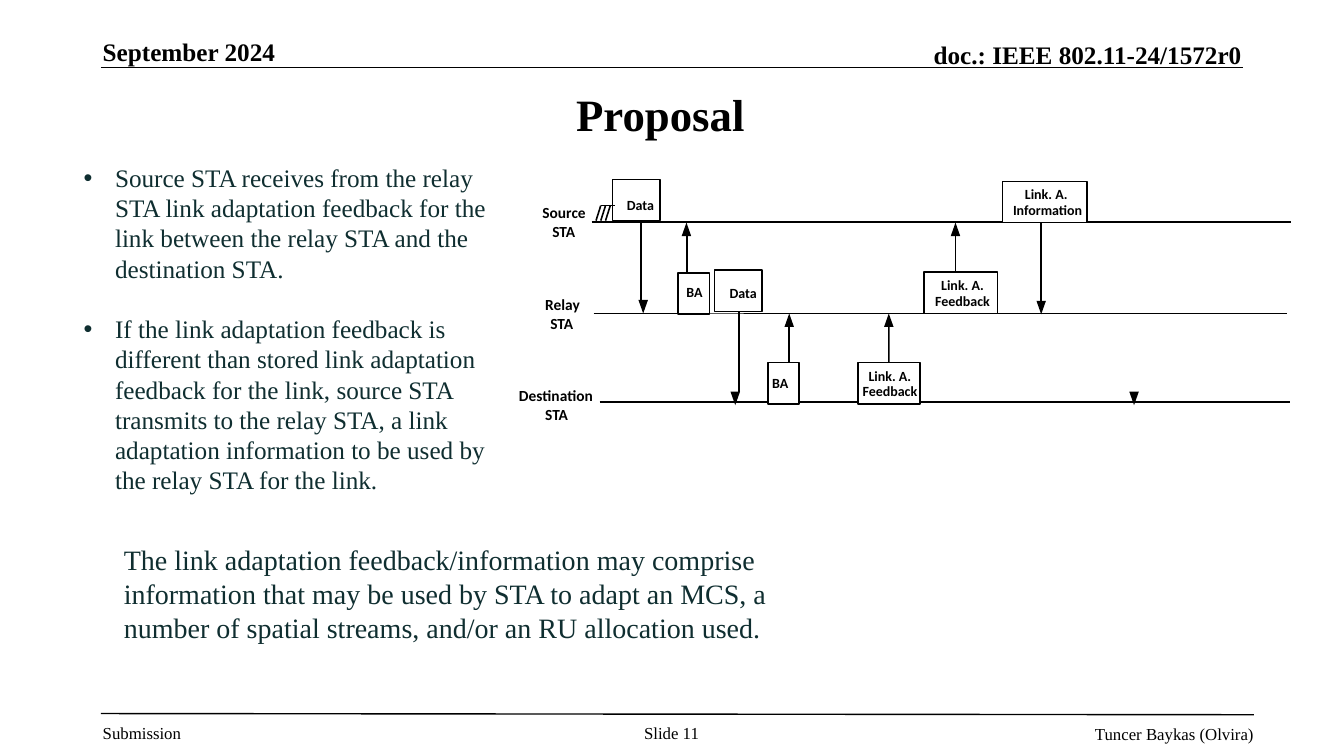
from lxml import etree
from pptx import Presentation
from pptx.dml.color import RGBColor
from pptx.enum.shapes import MSO_CONNECTOR, MSO_SHAPE
from pptx.enum.text import MSO_ANCHOR, MSO_AUTO_SIZE, PP_ALIGN
from pptx.oxml.ns import qn
from pptx.util import Cm, Pt

STRAIGHT = MSO_CONNECTOR.STRAIGHT
RECT = MSO_SHAPE.RECTANGLE
TOP, MIDDLE, BOTTOM = MSO_ANCHOR.TOP, MSO_ANCHOR.MIDDLE, MSO_ANCHOR.BOTTOM
LEFT, CENTER, RIGHT = PP_ALIGN.LEFT, PP_ALIGN.CENTER, PP_ALIGN.RIGHT
FIT, FIXED = MSO_AUTO_SIZE.SHAPE_TO_FIT_TEXT, MSO_AUTO_SIZE.NONE

COLORS = {"ink": "000000", "paper": "FFFFFF", "body": "0F2E30"}
SERIF, SANS = "Times New Roman", "Calibri"
DIAGRAM_LINE = 1.13
BOX_HEIGHT = 1.04
HEAD_WIDTH, HEAD_LENGTH = 0.24, 0.34


def color(name):
    return RGBColor.from_string(COLORS[name])


class SlideBuilder:
    """Adds elements to one slide; lengths are in centimetres."""

    def __init__(self, slide):
        self.shapes = slide.shapes

    def text(self, x, y, w, h, paragraphs, size, font=SERIF, bold=False, ink="ink",
             align=LEFT, anchor=TOP, inset=(0, 0), wrap=True, fit=FIXED):
        sp = self.shapes.add_textbox(Cm(x), Cm(y), Cm(w), Cm(h))
        tf = sp.text_frame
        tf.word_wrap, tf.auto_size, tf.vertical_anchor = wrap, fit, anchor
        tf.margin_left = tf.margin_right = Cm(inset[0])
        tf.margin_top = tf.margin_bottom = Cm(inset[1])
        tf.text = "\n".join(paragraphs)
        for p in tf.paragraphs:
            p.alignment = align
            for r in p.runs:
                r.font.name, r.font.size, r.font.bold = font, Pt(size), bold
                r.font.color.rgb = color(ink)
        return tf

    def body(self, x, y, w, h, paragraphs, size, pitch, bullets=False):
        """Running text with a fixed line pitch in points."""
        tf = self.text(x, y, w, h, paragraphs, size, ink="body", inset=(0.25, 0.13))
        for i, p in enumerate(tf.paragraphs):
            p.line_spacing = Pt(pitch)
            p.space_before = Pt(pitch if i else 0)
            if bullets:
                pPr = p._p.get_or_add_pPr()
                pPr.set("marL", str(Cm(1.3)))
                pPr.set("indent", str(-Cm(0.79)))
                etree.SubElement(pPr, qn("a:buFont")).set("typeface", "Arial")
                etree.SubElement(pPr, qn("a:buChar")).set("char", "•")

    def label(self, x, y, w, text, size=10):
        self.text(x, y, w, 0.5, [text], size, SANS, bold=True, wrap=False, fit=FIT)

    def line(self, x1, y1, x2, y2, width=DIAGRAM_LINE):
        cx = self.shapes.add_connector(STRAIGHT, Cm(x1), Cm(y1), Cm(x2), Cm(y2))
        cx.line.color.rgb = color("ink")
        cx.line.width = Pt(width)
        etree.SubElement(cx._element.spPr, qn("a:effectLst"))
        return cx

    def box(self, x, y, w, outlined=True):
        sp = self.shapes.add_shape(RECT, Cm(x), Cm(y), Cm(w), Cm(BOX_HEIGHT))
        sp.shadow.inherit = False
        sp.fill.solid()
        sp.fill.fore_color.rgb = color("paper")
        if outlined:
            sp.line.color.rgb = color("ink")
            sp.line.width = Pt(DIAGRAM_LINE)
        else:
            sp.line.fill.background()
        return sp

    def head(self, x, y, down):
        """Arrowhead with its tip at (x, y)."""
        base = y - HEAD_LENGTH if down else y + HEAD_LENGTH
        half = HEAD_WIDTH / 2
        fb = self.shapes.build_freeform(Cm(x + half), Cm(base))
        fb.add_line_segments([(Cm(x), Cm(y)), (Cm(x - half), Cm(base))], close=True)
        sp = fb.convert_to_shape()
        sp.shadow.inherit = False
        sp.fill.solid()
        sp.fill.fore_color.rgb = color("ink")
        sp.line.fill.background()

    def arrow(self, x, start, tip_x, tip_y):
        down = tip_y > start
        end = tip_y - HEAD_LENGTH if down else tip_y + HEAD_LENGTH
        cx = self.line(x, start, x, end)
        self.head(tip_x, tip_y, down)
        return cx


def add_page_frame(s):
    s.line(2.54, 1.7, 31.32, 1.7, 1)
    s.line(2.54, 17.98, 31.6, 18.01, 1)
    s.text(2.59, 0.91, 6.93, 0.76, ["September 2024"], 18, bold=True, anchor=BOTTOM)
    s.text(13.26, 0.99, 18.03, 0.76, ["doc.: IEEE 802.11-24/1572r0"], 18, bold=True,
           align=RIGHT, anchor=BOTTOM)
    s.text(2.59, 18.21, 2.08, 0.51, ["Submission"], 12)
    s.text(15.77, 18.21, 2.31, 0.51, ["Slide 11"], 12, align=CENTER)
    s.text(19.81, 18.24, 11.79, 0.51, ["Tuncer Baykas (Olvira)"], 12, align=RIGHT)


def add_sequence_diagram(s):
    # Timelines of the three stations
    for x1, x2, y in [(14.91, 32.54, 5.59), (14.96, 32.44, 7.9), (15.11, 32.51, 10.13)]:
        s.line(x1, y, x2, y)
    stations = [("Source", 13.67, 5.13, 1.3, 13.92), ("Relay", 13.74, 7.44, 1.17, 13.87),
                ("Destination", 13.08, 9.73, 2.06, 13.74)]
    for name, x, y, w, sta_x in stations:
        s.label(x, y, w, name, 11)
        s.label(sta_x, y + 0.48, 0.81, "STA", 11)

    # Frames, each with its label lines
    for x, y, w in [(17.55, 6.86, 1.19), (27.66, 6.83, 1.85)]:
        s.box(x, y, w, outlined=False)
    frames = [
        (15.44, 4.52, 1.19, [("Data", 15.8, 4.95, 0.86)]),
        (17.09, 6.88, 0.79, [("BA", 17.3, 7.14, 0.48)]),
        (18.01, 6.81, 1.19, [("Data", 18.39, 7.16, 0.86)]),
        (23.29, 6.86, 1.85, [("Link. A.", 23.72, 6.96, 1.24), ("Feedback", 23.57, 7.37, 1.55)]),
        (25.27, 4.57, 2.13, [("Link. A.", 25.83, 4.67, 1.24), ("Information", 25.53, 5.08, 1.96)]),
        (19.35, 9.14, 0.79, [("BA", 19.46, 9.45, 0.41)]),
        (21.62, 9.14, 1.56, [("Link. A.", 21.89, 9.25, 1.24), ("Feedback", 21.74, 9.65, 1.55)]),
    ]
    for x, y, w, lines in frames:
        last_box = s.box(x, y, w)
        for text, text_x, text_y, text_w in lines:
            s.label(text_x, text_y, text_w, text)

    # Hatching before the first frame
    s.line(15.49, 5.18, 15.14, 5.18)
    for i in range(3):
        x = 15.14 + 0.12 * i
        s.line(x, 5.18, x - 0.12, 5.56)

    # Transmissions
    for x, start, tip_x, tip_y in [(16.15, 5.56, 16.21, 7.9), (26.24, 5.61, 26.24, 7.92),
                                   (18.62, 7.85, 18.53, 10.21), (17.32, 6.86, 17.3, 5.61),
                                   (24.08, 6.86, 24.08, 5.61), (19.89, 9.14, 19.89, 7.9)]:
        s.arrow(x, start, tip_x, tip_y)
    s.arrow(22.4, 9.14, 22.4, 7.9).begin_connect(last_box, 0)
    s.head(28.58, 10.21, down=True)


def main():
    prs = Presentation()
    prs.slide_width, prs.slide_height = Cm(33.87), Cm(19.05)
    s = SlideBuilder(prs.slides.add_slide(prs.slide_layouts[6]))
    add_page_frame(s)
    s.text(2.03, 1.02, 29.51, 3.68, ["Proposal "], 32, bold=True, align=CENTER,
           anchor=MIDDLE, inset=(0.25, 0.13))
    s.body(1.35, 3.96, 11.4, 9.5, [
        "Source STA receives from the relay STA link adaptation feedback for the link "
        "between the relay STA and the destination STA.",
        "If the link adaptation feedback is different than stored link adaptation feedback "
        "for the link, source STA transmits to the relay STA, a link adaptation information "
        "to be used by the relay STA for the link.",
    ], 18, 21.6, bullets=True)
    s.body(2.87, 13.54, 16.94, 3.84, [
        "The link adaptation feedback/information may comprise information that may be used "
        "by STA to adapt an MCS, a number of spatial streams, and/or an RU allocation used.",
    ], 20, 24.2)
    add_sequence_diagram(s)
    prs.save("out.pptx")


if __name__ == "__main__":
    main()
